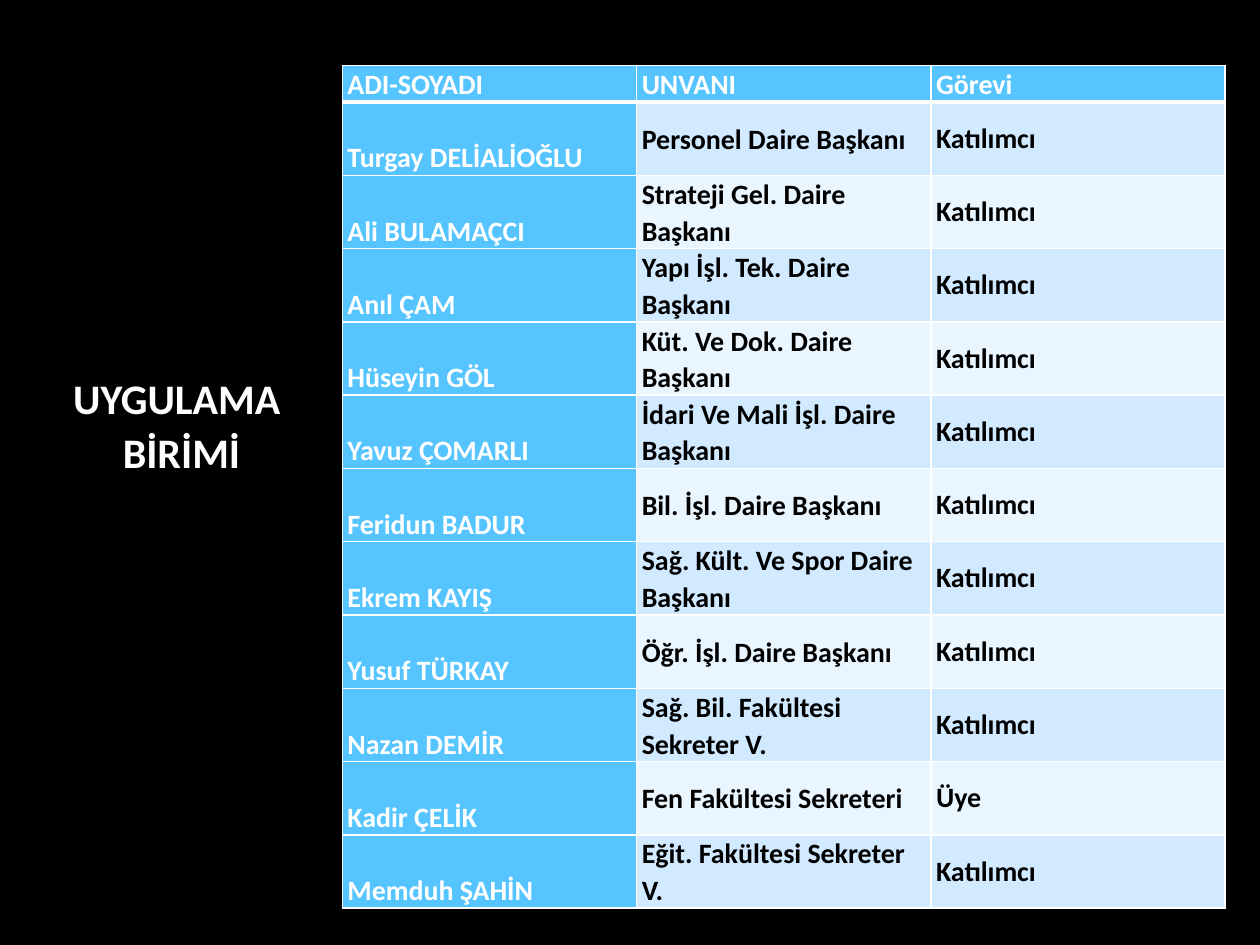
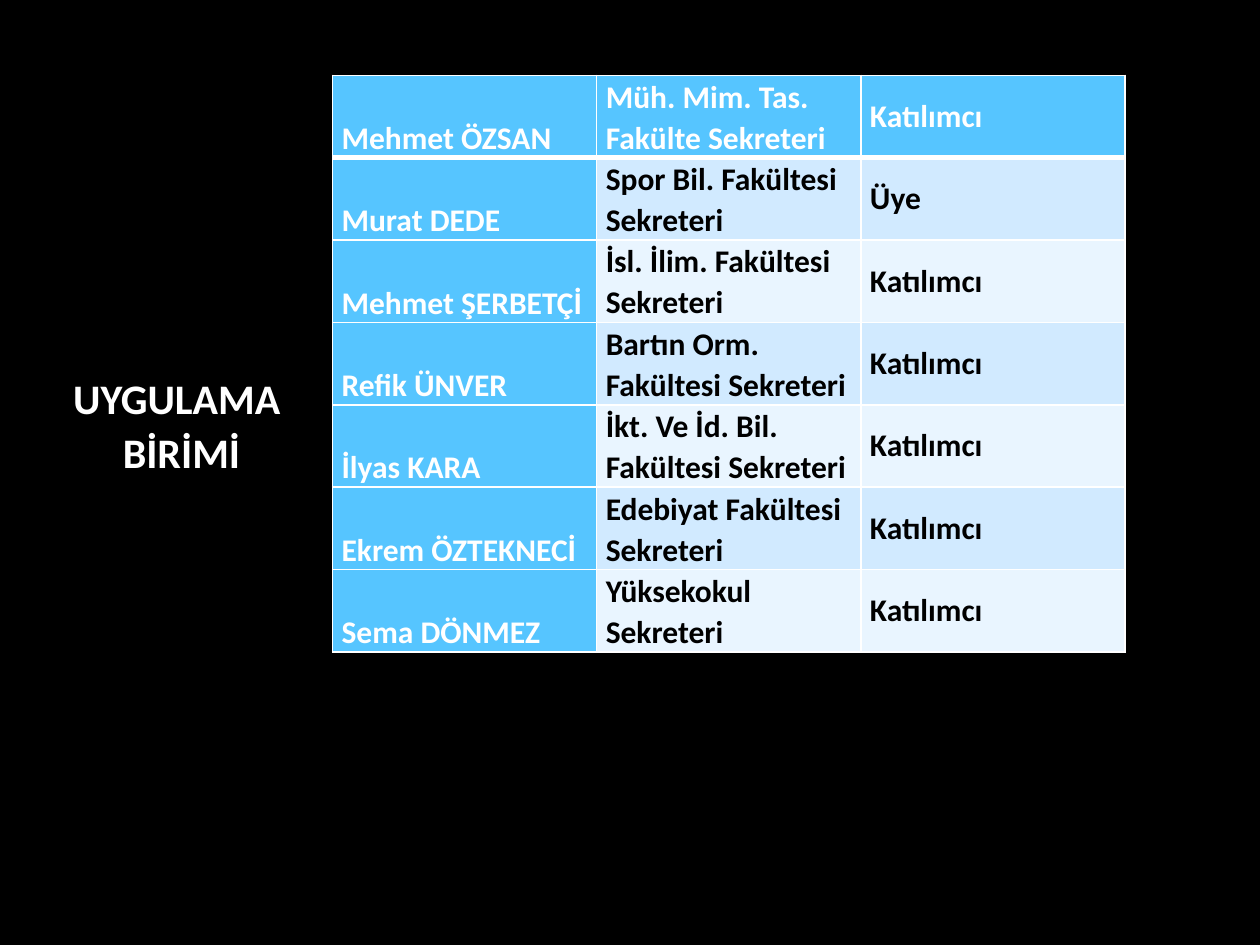
from dataclasses import dataclass

from lxml.etree import SubElement
from pptx import Presentation
from pptx.dml.color import RGBColor
from pptx.enum.text import MSO_ANCHOR, MSO_AUTO_SIZE, PP_ALIGN
from pptx.oxml.ns import qn
from pptx.util import Pt


@dataclass(frozen=True)
class Theme:
    font: str = "Calibri"
    background: str = "000000"
    light: str = "FFFFFF"
    dark: str = "000000"
    accent: str = "56C5FF"
    bands: tuple = ("D1EAFF", "E9F5FF")
    title_size: int = 24
    line_spacing: float = 1.07
    thin_line: int = 1
    header_line: int = 3


MEMBER = "Katılımcı"
HEADINGS = ("ADI-SOYADI", "UNVANI", "Görevi")
DEPARTMENT_HEADS = [
    ("Turgay DELİALİOĞLU", "Personel Daire Başkanı", MEMBER),
    ("Ali BULAMAÇCI", "Strateji Gel. Daire Başkanı", MEMBER),
    ("Anıl ÇAM", "Yapı İşl. Tek. Daire Başkanı", MEMBER),
    ("Hüseyin GÖL", "Küt. Ve Dok. Daire Başkanı", MEMBER),
    ("Yavuz ÇOMARLI", "İdari Ve Mali İşl. Daire Başkanı", MEMBER),
    ("Feridun BADUR", "Bil. İşl. Daire Başkanı", MEMBER),
    ("Ekrem KAYIŞ", "Sağ. Kült. Ve Spor Daire Başkanı", MEMBER),
    ("Yusuf TÜRKAY", "Öğr. İşl. Daire Başkanı", MEMBER),
    ("Nazan DEMİR", "Sağ. Bil. Fakültesi Sekreter V.", MEMBER),
    ("Kadir ÇELİK", "Fen Fakültesi Sekreteri", "Üye"),
    ("Memduh ŞAHİN", "Eğit. Fakültesi Sekreter V.", MEMBER),
]
FACULTY_SECRETARIES = [
    ("Mehmet ÖZSAN", "Müh. Mim. Tas. Fakülte Sekreteri", MEMBER),
    ("Murat DEDE", "Spor Bil. Fakültesi Sekreteri", "Üye"),
    ("Mehmet ŞERBETÇİ", "İsl. İlim. Fakültesi Sekreteri", MEMBER),
    ("Refik ÜNVER", "Bartın Orm. Fakültesi Sekreteri", MEMBER),
    ("İlyas KARA", "İkt. Ve İd. Bil. Fakültesi Sekreteri", MEMBER),
    ("Ekrem ÖZTEKNECİ", "Edebiyat Fakültesi Sekreteri", MEMBER),
    ("Sema DÖNMEZ", "Yüksekokul Sekreteri", MEMBER),
]


class UnitDeck:
    def __init__(self, theme):
        self.theme = theme
        self.deck = Presentation()
        self.deck.slide_width, self.deck.slide_height = Pt(720), Pt(540)
        self.page = None

    def add_page(self):
        self.page = self.deck.slides.add_slide(self.deck.slide_layouts[6])
        fill = self.page.background.fill
        fill.solid()
        fill.fore_color.rgb = RGBColor.from_string(self.theme.background)

    def style(self, para, size, color, spacing):
        para.line_spacing = spacing
        para.font.name = self.theme.font
        para.font.size = Pt(size)
        para.font.bold = True
        para.font.color.rgb = RGBColor.from_string(color)

    def add_title(self, *lines):
        box = self.page.shapes.add_textbox(Pt(28.8), Pt(207.4), Pt(149.8), Pt(68.4))
        frame = box.text_frame
        frame.word_wrap = False
        frame.auto_size = MSO_AUTO_SIZE.SHAPE_TO_FIT_TEXT
        frame.text = "\n".join(lines)
        for para in frame.paragraphs:
            para.alignment = PP_ALIGN.CENTER
            self.style(para, self.theme.title_size, self.theme.light, self.theme.line_spacing)

    def add_borders(self, cell, row):
        properties = cell._tc.get_or_add_tcPr()
        for side in "LRTB":
            under_header = (row, side) in ((0, "B"), (1, "T"))
            width = self.theme.header_line if under_header else self.theme.thin_line
            line = SubElement(properties, qn(f"a:ln{side}"), w=str(Pt(width)))
            SubElement(SubElement(line, qn("a:solidFill")), qn("a:srgbClr"), val=self.theme.light)

    def add_cell(self, cell, text, row, column, size, inset):
        theme = self.theme
        accented = row == 0 or column == 0
        self.add_borders(cell, row)
        cell.fill.solid()
        color = theme.accent if accented else theme.bands[(row - 1) % 2]
        cell.fill.fore_color.rgb = RGBColor.from_string(color)
        cell.margin_left = cell.margin_right = Pt(inset)
        cell.margin_top = cell.margin_bottom = 0
        cell.vertical_anchor = MSO_ANCHOR.BOTTOM if column == 0 else MSO_ANCHOR.MIDDLE
        cell.text = text
        spacing = 1.0 if column == 2 and text not in HEADINGS else theme.line_spacing
        self.style(cell.text_frame.paragraphs[0], size,
                   theme.light if accented else theme.dark, spacing)

    def add_people(self, people, left, top, column_width, heights, size, inset):
        table = self.page.shapes.add_table(
            len(people), len(HEADINGS), Pt(left), Pt(top),
            Pt(column_width * len(HEADINGS)), Pt(sum(heights))).table
        for column in table.columns:
            column.width = Pt(column_width)
        for row, (person, height) in enumerate(zip(people, heights)):
            table.rows[row].height = Pt(height)
            for column, text in enumerate(person):
                self.add_cell(table.cell(row, column), text, row, column, size, inset)


def main():
    unit = UnitDeck(Theme())
    tables = [
        dict(people=[HEADINGS, *DEPARTMENT_HEADS], left=195.6, top=37.4, column_width=168.2,
             heights=[21] + [41.87] * len(DEPARTMENT_HEADS), size=16, inset=3),
        dict(people=FACULTY_SECRETARIES, left=190, top=43, column_width=151,
             heights=[47.1] * len(FACULTY_SECRETARIES), size=18, inset=5.2),
    ]
    for table in tables:
        unit.add_page()
        unit.add_people(**table)
        unit.add_title("UYGULAMA ", "BİRİMİ")
    unit.deck.save("out.pptx")


if __name__ == "__main__":
    main()
